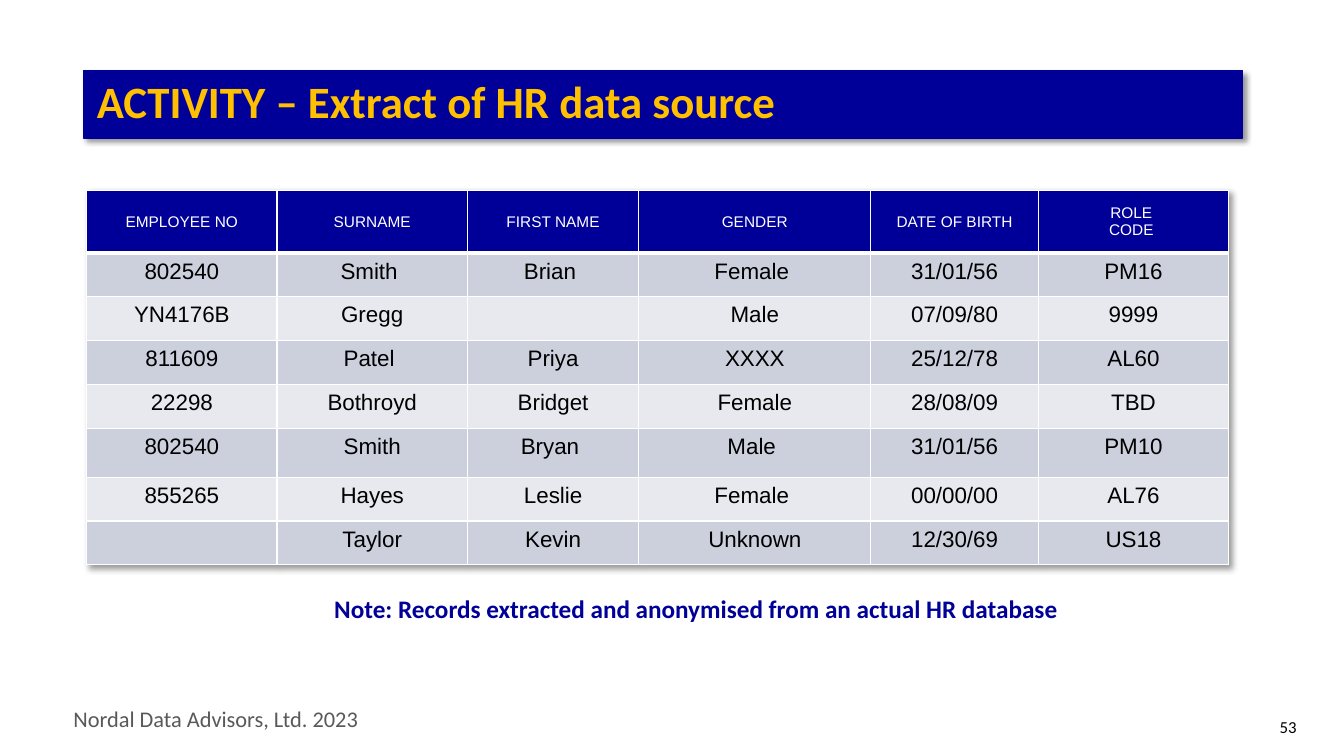
import pptx
import pptx.dml.color
import pptx.enum.shapes
import pptx.enum.text
import pptx.oxml
import pptx.oxml.ns
import pptx.util

Pt = pptx.util.Pt
ALIGN = pptx.enum.text.PP_ALIGN
ANCHOR = pptx.enum.text.MSO_ANCHOR

NAVY, GOLD, WHITE, BLACK, GREY = "000099", "FFC000", "FFFFFF", "000000", "595959"
BANDS = ["CBD0DC", "E7E9EE"]

HEADINGS = ["EMPLOYEE NO", "SURNAME", "FIRST NAME", "GENDER", "DATE OF BIRTH", "ROLE \nCODE "]
RECORDS = [
    ["802540", "Smith ", "Brian ", "Female ", "31/01/56", "PM16"],
    ["YN4176B", "Gregg", "", "Male", "07/09/80", "9999"],
    ["811609", "Patel ", "Priya", "XXXX", "25/12/78", "AL60"],
    ["22298", "Bothroyd", "Bridget", "Female", "28/08/09", "TBD"],
    ["802540", "Smith", "Bryan ", "Male ", "31/01/56", "PM10"],
    ["855265", "Hayes", "Leslie", "Female ", "00/00/00", "AL76"],
    ["", "Taylor", "Kevin", "Unknown", "12/30/69", "US18"],
]
COLUMN_WIDTHS = [136, 136, 122.4, 165.8, 119.6, 136]
ROW_HEIGHTS = [44.6, 31.3, 31.3, 31.3, 31.3, 35, 31.3, 31.3]


def rgb(colour):
    return pptx.dml.color.RGBColor.from_string(colour)


def shadow_effect():
    return pptx.oxml.parse_xml(
        f'<a:effectLst {pptx.oxml.ns.nsdecls("a")}>'
        f'<a:outerShdw blurRad="{Pt(4)}" dist="{Pt(3)}" dir="2700000" algn="tl" rotWithShape="0">'
        f'<a:srgbClr val="{BLACK}"><a:alpha val="40000"/></a:srgbClr>'
        "</a:outerShdw></a:effectLst>"
    )


def write(frame, text, size, font, colour, bold=False, align=ALIGN.LEFT):
    frame.text = text
    for paragraph in frame.paragraphs:
        paragraph.alignment = align
        for run in paragraph.runs:
            run.font.size = Pt(size)
            run.font.name = font
            run.font.bold = bold
            run.font.color.rgb = rgb(colour)


def set_insets(holder, side, top):
    holder.margin_left = holder.margin_right = Pt(side)
    holder.margin_top = holder.margin_bottom = Pt(top)


def add_title(slide, text):
    banner = slide.shapes.add_shape(
        pptx.enum.shapes.MSO_SHAPE.RECTANGLE, Pt(59.8), Pt(50.2), Pt(828), Pt(48.4))
    banner.fill.solid()
    banner.fill.fore_color.rgb = rgb(NAVY)
    banner.line.color.rgb = rgb(NAVY)
    banner.line.width = Pt(0.75)
    banner.shadow.inherit = False
    banner.element.spPr.append(shadow_effect()[0].getparent())
    banner.element.spPr.remove(banner.element.spPr.find(pptx.oxml.ns.qn("a:effectLst")))
    frame = banner.text_frame
    frame.vertical_anchor = ANCHOR.MIDDLE
    set_insets(frame, 9.4, 4.7)
    write(frame, text, 32, "Calibri", GOLD, bold=True)
    frame.paragraphs[0].line_spacing = 0.9


def add_label(slide, box, text, size, colour, bold=False, align=ALIGN.LEFT,
              anchor=ANCHOR.TOP, wrap=True):
    frame = slide.shapes.add_textbox(*map(Pt, box)).text_frame
    frame.word_wrap = wrap
    frame.vertical_anchor = anchor
    write(frame, text, size, "Calibri", colour, bold, align)


def set_borders(cell, widths):
    """Draw white borders; widths maps the sides L, R, T, B to points."""
    properties = cell._tc.get_or_add_tcPr()
    for side, width in widths.items():
        properties.append(pptx.oxml.parse_xml(
            f'<a:ln{side} {pptx.oxml.ns.nsdecls("a")} w="{Pt(width)}">'
            f'<a:solidFill><a:srgbClr val="{WHITE}"/></a:solidFill></a:ln{side}>'))


def fill_cell(cell, text, row):
    heading = row == 0
    set_borders(cell, {"L": 1, "R": 1, "T": 3 if row == 1 else 1, "B": 3 if heading else 1})
    cell.fill.solid()
    cell.fill.fore_color.rgb = rgb(NAVY if heading else BANDS[(row - 1) % 2])
    set_insets(cell, 8.64, 4.32)
    cell.vertical_anchor = ANCHOR.MIDDLE if heading else ANCHOR.TOP
    write(cell.text_frame, text, 11 if heading else 16, "Arial",
          WHITE if heading else BLACK, align=ALIGN.CENTER)


def add_records(slide, rows):
    table = slide.shapes.add_table(
        len(rows), len(HEADINGS), Pt(61.9), Pt(136.1),
        Pt(sum(COLUMN_WIDTHS)), Pt(sum(ROW_HEIGHTS))).table
    table._tbl.tblPr.insert(0, shadow_effect())
    for column, width in zip(table.columns, COLUMN_WIDTHS):
        column.width = Pt(width)
    for row, (values, height) in enumerate(zip(rows, ROW_HEIGHTS)):
        table.rows[row].height = Pt(height)
        for column, value in enumerate(values):
            fill_cell(table.cell(row, column), value, row)


def main():
    deck = pptx.Presentation()
    deck.slide_width, deck.slide_height = Pt(960), Pt(540)
    slide = deck.slides.add_slide(deck.slide_layouts[6])
    add_label(slide, (45.4, 500.4, 260.6, 26.6), "Nordal Data Advisors, Ltd. 2023", 16, GREY)
    add_records(slide, [HEADINGS] + RECORDS)
    add_label(slide, (887.8, 504.7, 45.4, 28.8), "53", 12, BLACK,
              align=ALIGN.RIGHT, anchor=ANCHOR.MIDDLE)
    add_label(slide, (221.8, 420.5, 550.8, 28.8),
              "Note: Records extracted and anonymised from an actual HR database",
              18, NAVY, bold=True, align=ALIGN.CENTER, wrap=False)
    add_title(slide, "ACTIVITY – Extract of HR data source")
    deck.save("out.pptx")


if __name__ == "__main__":
    main()
